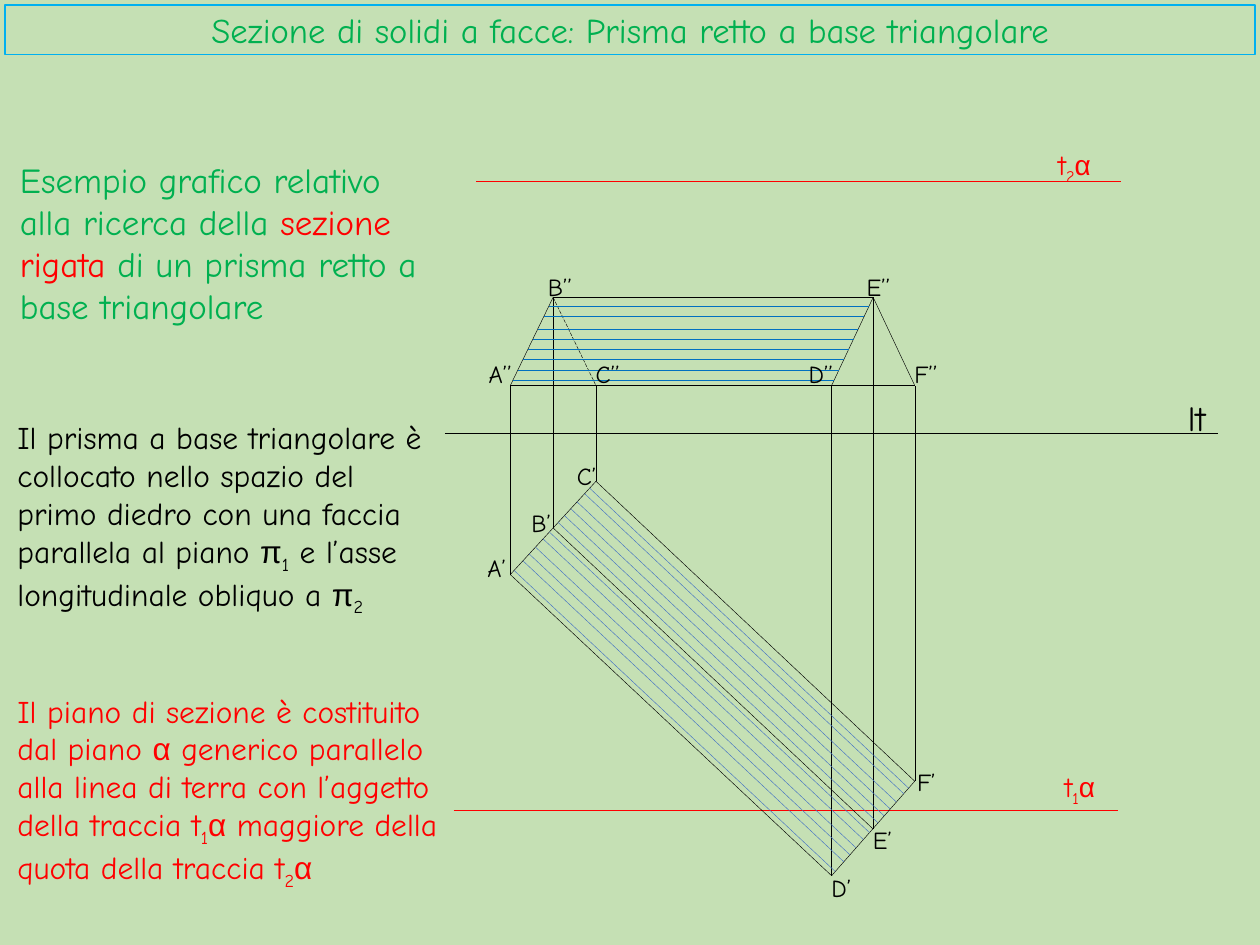
"""Builds the slide on the ruled section of a right triangular prism."""
import pptx
import pptx.util
import pptx.dml.color
import pptx.enum.dml
import pptx.enum.shapes
import pptx.enum.text
import pptx.oxml

Inches, Pt = pptx.util.Inches, pptx.util.Pt
RGB = pptx.dml.color.RGBColor
BLACK, RED, GREEN = RGB(0, 0, 0), RGB(255, 0, 0), RGB(0, 0xB0, 0x50)
SKY, BLUE, STEEL = RGB(0, 0xB0, 0xF0), RGB(0, 0x70, 0xC0), RGB(0x44, 0x72, 0xC4)
PALE = RGB(0xC5, 0xE0, 0xB4)

TITLE = "Sezione di solidi a facce: Prisma retto a base triangolare"
TEXTS = [
    (0.06, 1.21, 3.54, 1.45, 20, GREEN,
     "Esempio grafico relativo alla ricerca della |sezione rigata"
     "| di un prisma retto a base triangolare"),
    (0.04, 3.27, 3.54, 1.62, 18, BLACK,
     "Il prisma a base triangolare è collocato nello spazio del primo diedro "
     "con una faccia parallela al piano |π|1| e l’asse longitudinale obliquo a |π|2"),
    (0.04, 5.44, 3.54, 1.92, 18, RED,
     "Il piano di sezione è costituito dal piano |α| generico parallelo alla linea "
     "di terra con l’aggetto della traccia t|1|α| maggiore della quota della "
     "traccia t|2|α"),
    (8.3, 1.12, 0.55, 0.31, 16, RED, "t|2|α"),
    (8.35, 6.06, 0.55, 0.37, 16, RED, "t|1|α"),
    (9.33, 3.1, 0.51, 0.44, 20, BLACK, "lt"),
]
LABELS = {
    "A’": (3.77, 4.34), "A’’": (3.78, 2.8), "B’": (4.12, 3.98), "B’’": (4.25, 2.11),
    "C’": (4.48, 3.61), "C’’": (4.63, 2.8), "D’": (6.5, 6.88), "D’’": (6.32, 2.8),
    "E’": (6.83, 6.5), "E’’": (6.78, 2.11), "F’": (7.18, 6.04), "F’’": (7.16, 2.8),
}
POINTS = {
    "A1": (4.05, 4.56), "B1": (4.39, 4.19), "C1": (4.73, 3.82),
    "D1": (6.6, 6.95), "E1": (6.93, 6.58), "F1": (7.26, 6.2),
    "A2": (4.05, 3.06), "B2": (4.39, 2.36), "C2": (4.73, 3.06),
    "D2": (6.6, 3.06), "E2": (6.93, 2.36), "F2": (7.26, 3.06),
}
EDGES = ("A1D1 C1F1 B1E1 C1A1 F1D1 A1A2 B1B2 C1C2 D1D2 E1E2 F1F2 "
         "A2F2 B2E2 A2B2 E2F2 E2D2").split()
AXES = [((3.53, 3.44), (9.67, 3.44), BLACK), ((3.6, 6.43), (8.87, 6.43), RED),
        ((3.78, 1.44), (8.9, 1.44), RED)]
PLAN = [4.08, 4.15, 4.2, 4.25, 4.31, 4.36, 4.43, 4.48, 4.53, 4.58, 4.64, 4.68]
FRONT = [2.43, 2.51, 2.61, 2.69, 2.77, 2.85, 2.94, 3.02]

deck = pptx.Presentation()
deck.slide_width, deck.slide_height = Inches(10), Inches(7.5)
slide = deck.slides.add_slide(deck.slide_layouts[5])
slide.background.fill.solid()
slide.background.fill.fore_color.rgb = PALE


def line(start, end, color=BLACK, dash=None):
    ends = [Inches(n) for n in (*start, *end)]
    item = slide.shapes.add_connector(pptx.enum.shapes.MSO_CONNECTOR.STRAIGHT, *ends)
    item.line.color.rgb, item.line.width = color, Pt(0.25)
    if dash:
        item.line.dash_style = dash
    item._element.spPr.append(pptx.oxml.parse_xml(
        '<a:effectLst xmlns:a="http://schemas.openxmlformats.org/drawingml/2006/main"/>'))


def style(run, size, color):
    font = run.font
    font.size, font.color.rgb = Pt(size), color
    font.name = "Arial" if run.text in "απ" else "Comic Neue"
    if run.text in "12":
        font._element.set("baseline", "-25000")


def write(left, top, width, height, size, color, text):
    box = slide.shapes.add_textbox(*map(Inches, (left, top, width, height)))
    frame = box.text_frame
    frame.word_wrap = True
    frame.auto_size = pptx.enum.text.MSO_AUTO_SIZE.SHAPE_TO_FIT_TEXT
    for part in text.split("|"):
        run = frame.paragraphs[0].add_run()
        run.text = part
        style(run, size, RED if part == "sezione rigata" else color)


def along(start, end, share):
    return [a + (b - a) * share for a, b in zip(POINTS[start], POINTS[end])]


def hatch(near, far, marks, axis, color):
    first, last = POINTS[near[0]][axis], POINTS[near[1]][axis]
    for mark in marks:
        share = (mark - first) / (last - first)
        line(along(*near, share), along(*far, share), color)


for start, end, color in AXES:
    line(start, end, color)
for edge in EDGES:
    line(POINTS[edge[:2]], POINTS[edge[2:]])
line(POINTS["B2"], POINTS["C2"], dash=pptx.enum.dml.MSO_LINE.LONG_DASH)
hatch(("A1", "C1"), ("D1", "F1"), PLAN, 0, STEEL)
hatch(("A2", "B2"), ("D2", "E2"), FRONT, 1, BLUE)

for name, (left, top) in LABELS.items():
    write(left, top, 0.43, 0.34, 14, BLACK, name)
for text in TEXTS:
    write(*text)

title = slide.shapes.title
title.left, title.top, title.width, title.height = map(Inches, (0.04, 0.04, 9.92, 0.39))
title.line.color.rgb, title.line.width = SKY, Pt(0.75)
frame = title.text_frame
frame.text = TITLE
frame.margin_top = frame.margin_bottom = 0
frame.vertical_anchor = pptx.enum.text.MSO_ANCHOR.MIDDLE
frame.paragraphs[0].alignment = pptx.enum.text.PP_ALIGN.CENTER
style(frame.paragraphs[0].runs[0], 19.8, GREEN)

deck.save("out.pptx")
